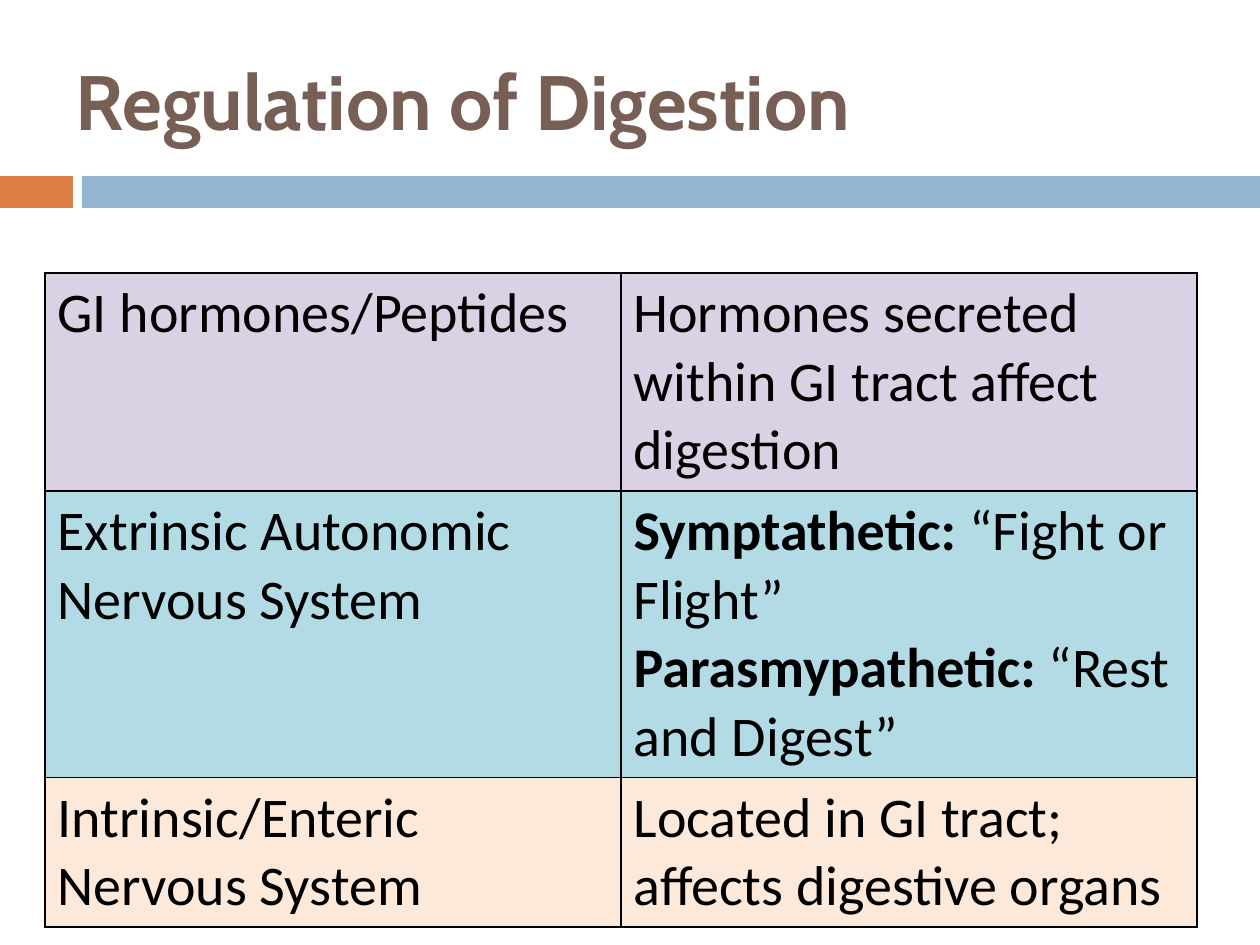
import dataclasses
import typing

import lxml.etree
import pptx
import pptx.dml.color
import pptx.enum.shapes
import pptx.enum.text
import pptx.oxml.ns
import pptx.util

SCALE = 914400 / 126
Runs = list[tuple[str, bool]]


@dataclasses.dataclass
class Bar:
    left: int
    width: int
    fill: str


@dataclasses.dataclass
class Row:
    height: int
    fill: str
    alpha: int
    cells: tuple[list[Runs], list[Runs]]


BARS = [Bar(0, 73, "DD8047"), Bar(82, 1178, "94B6D2")]

ROWS = [
    Row(214, "CCC1DA", 71, (
        [[("GI hormones/Peptides", False)]],
        [[("Hormones secreted within GI tract affect digestion", False)]],
    )),
    Row(281, "93CDDD", 71, (
        [[("Extrinsic Autonomic Nervous System", False)]],
        [
            [("Symptathetic: ", True), ("“Fight or Flight”", False)],
            [("Parasmypathetic: ", True), ("“Rest and Digest”", False)],
        ],
    )),
    Row(147, "FAC090", 34, (
        [[("Intrinsic/Enteric Nervous System", False)]],
        [[("Located in GI tract; affects digestive organs", False)]],
    )),
]


def px(size: int) -> int:
    return round(size * SCALE)


def color(code: str) -> pptx.dml.color.RGBColor:
    return pptx.dml.color.RGBColor.from_string(code)


def write(frame: typing.Any, text: list[Runs], *, font: str, size: int, fill: str) -> None:
    frame.word_wrap = True
    for index, runs in enumerate(text):
        para = frame.add_paragraph() if index else frame.paragraphs[0]
        para.alignment = pptx.enum.text.PP_ALIGN.LEFT
        for words, bold in runs:
            run = para.add_run()
            run.text = words
            run.font.name = font
            run.font.size = pptx.util.Pt(size)
            run.font.bold = bold
            run.font.color.rgb = color(fill)


def draw_bar(slide: typing.Any, bar: Bar) -> None:
    shape = slide.shapes.add_shape(
        pptx.enum.shapes.MSO_SHAPE.RECTANGLE,
        px(bar.left), px(176), px(bar.width), px(32),
    )
    shape.shadow.inherit = False
    shape.fill.solid()
    shape.fill.fore_color.rgb = color(bar.fill)
    shape.line.fill.background()


def draw_title(slide: typing.Any) -> None:
    title = slide.shapes.title
    title.left, title.top = px(63), px(32)
    title.width, title.height = px(1124), px(136)
    frame = title.text_frame
    frame.auto_size = pptx.enum.text.MSO_AUTO_SIZE.NONE
    frame.vertical_anchor = pptx.enum.text.MSO_ANCHOR.MIDDLE
    write(frame, [[("Regulation of Digestion", True)]], font="Cabin", size=44, fill="775F55")


def style_cell(cell: typing.Any, fill: str, alpha: int) -> None:
    qn = pptx.oxml.ns.qn
    props = cell._tc.get_or_add_tcPr()
    for side in "LRTB":
        line = lxml.etree.SubElement(props, qn(f"a:ln{side}"), w=str(pptx.util.Pt(1)))
        solid = lxml.etree.SubElement(line, qn("a:solidFill"))
        lxml.etree.SubElement(solid, qn("a:srgbClr"), val="000000")
    cell.fill.solid()
    cell.fill.fore_color.rgb = color(fill)
    tint = props.find(qn("a:solidFill")).find(qn("a:srgbClr"))
    lxml.etree.SubElement(tint, qn("a:alpha"), val=str(alpha * 1000))


def draw_table(slide: typing.Any, rows: list[Row]) -> None:
    height = sum(row.height for row in rows)
    table = slide.shapes.add_table(
        len(rows), 2, px(45), px(273), px(1152), px(height)
    ).table
    table.first_row = False
    table.horz_banding = False
    for index, row in enumerate(rows):
        table.rows[index].height = px(row.height)
        for cell, text in zip(table.rows[index].cells, row.cells):
            style_cell(cell, row.fill, row.alpha)
            write(cell.text_frame, text, font="Calibri", size=32, fill="000000")


def main() -> None:
    deck = pptx.Presentation()
    deck.slide_width, deck.slide_height = px(1260), px(945)
    slide = deck.slides.add_slide(deck.slide_layouts[5])
    for bar in BARS:
        draw_bar(slide, bar)
    draw_title(slide)
    draw_table(slide, ROWS)
    deck.save("out.pptx")


if __name__ == "__main__":
    main()
